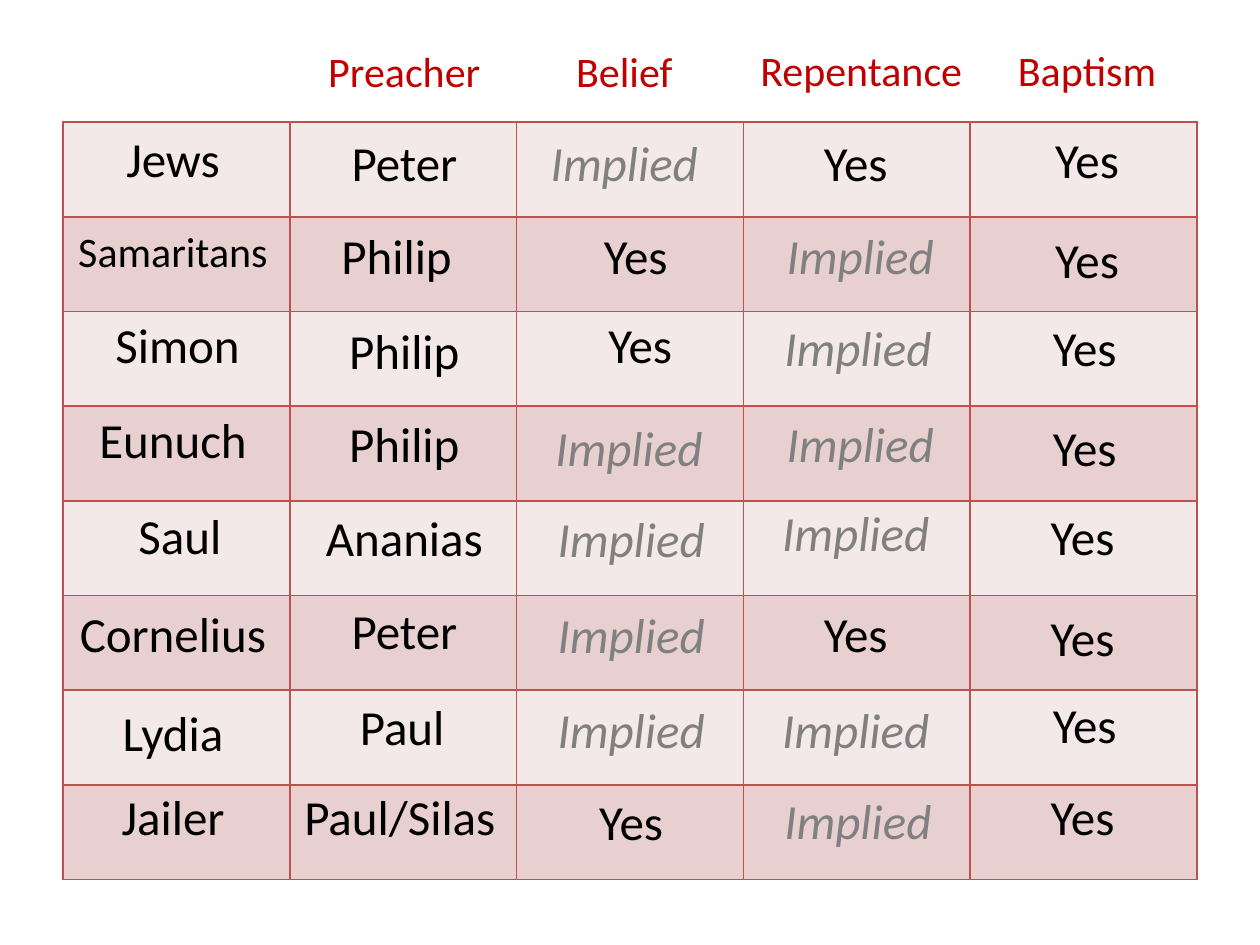
from typing import NamedTuple

from lxml import etree
from pptx import Presentation
from pptx.dml.color import RGBColor
from pptx.enum.text import MSO_AUTO_SIZE, PP_ALIGN
from pptx.oxml.ns import qn
from pptx.util import Inches, Pt

CENTER = PP_ALIGN.CENTER
FIT_SHAPE = MSO_AUTO_SIZE.SHAPE_TO_FIT_TEXT

SLIDE_W, SLIDE_H = 10, 7.5
GRID_LEFT, GRID_TOP = 0.5, 0.97
GRID_W, GRID_H = 9, 6.01
COLUMNS, ROWS = 5, 8
COLUMN, ROW = GRID_W / COLUMNS, GRID_H / ROWS
BORDER = "C0504D"
BANDS = ("F4E9E9", "E8D0D0")
HEADER_ROW = -1


class Style(NamedTuple):
    size: int
    color: str
    italic: bool
    height: float


class Entry(NamedTuple):
    text: str
    shift_columns: float
    shift_rows: float
    width_columns: float = 0.97


HEADING = Style(24, "C00000", False, 0.67)
SMALL = Style(24, "000000", False, 0.67)
STATED = Style(28, "000000", False, 0.76)
IMPLIED = Style(28, "808080", True, 0.76)
SPECIAL_STYLES = {"Implied": IMPLIED, "Samaritans": SMALL}

HEADINGS = (
    Entry("Preacher", 0.02, 0.12),
    Entry("Belief", -0.01, 0.12),
    Entry("Repentance", 0.01, 0.11, 1.02),
    Entry("Baptism", 0.03, 0.11),
)

CONVERSIONS = (
    (Entry("Jews", 0, 0), Entry("Peter", 0.02, 0.04), Entry("Implied", -0.01, 0.04),
     Entry("Yes", 0.01, 0.04), Entry("Yes", 0.03, 0.01)),
    (Entry("Samaritans", 0, 0.03), Entry("Philip ", 0.01, 0.03), Entry("Yes", 0.04, 0.03),
     Entry("Implied", 0.03, 0.03), Entry("Yes", 0.03, 0.07)),
    (Entry("Simon", 0.02, -0.03), Entry("Philip", 0.02, 0.03), Entry("Yes", 0.06, -0.03),
     Entry("Implied", 0.02, 0), Entry("Yes", 0.02, 0)),
    (Entry("Eunuch", 0, -0.03), Entry("Philip", 0.02, 0.01), Entry("Implied", 0.01, 0.05),
     Entry("Implied", 0.03, 0.01), Entry("Yes", 0.02, 0.05)),
    (Entry("Saul", 0.03, -0.02), Entry("Ananias", 0.02, 0.01), Entry("Implied", 0.02, 0.02),
     Entry("Implied", 0.01, -0.05), Entry("Yes", 0.01, -0.01)),
    (Entry("Cornelius", 0, 0.02), Entry("Peter", 0.02, -0.01), Entry("Implied", 0.02, 0.03),
     Entry("Yes", 0.01, 0.02), Entry("Yes", 0.01, 0.06)),
    (Entry("Lydia", 0, 0.07), Entry("Paul", 0.01, 0), Entry("Implied", 0.02, 0.03),
     Entry("Implied", 0.01, 0.03), Entry("Yes", 0.02, -0.02)),
    (Entry("Jailer", 0, -0.05), Entry("Paul/Silas", 0, -0.05), Entry("Yes", 0.02, 0.01),
     Entry("Implied", 0.02, 0), Entry("Yes", 0.01, -0.05)),
)


def rgb(value: str) -> RGBColor:
    """Turn a hex string into a colour."""
    return RGBColor.from_string(value)


def border_cell(cell) -> None:
    """Outline all four sides of a cell."""
    properties = cell._tc.get_or_add_tcPr()
    for side in ("a:lnL", "a:lnR", "a:lnT", "a:lnB"):
        line = etree.SubElement(properties, qn(side), w=str(Pt(1)))
        fill = etree.SubElement(line, qn("a:solidFill"))
        etree.SubElement(fill, qn("a:srgbClr"), val=BORDER)


def draw_grid(slide) -> None:
    """Draw the banded table behind the entries."""
    table = slide.shapes.add_table(
        ROWS, COLUMNS, Inches(GRID_LEFT), Inches(GRID_TOP), Inches(GRID_W), Inches(GRID_H)
    ).table
    for row_index in range(ROWS):
        for column_index in range(COLUMNS):
            cell = table.cell(row_index, column_index)
            border_cell(cell)
            cell.fill.solid()
            cell.fill.fore_color.rgb = rgb(BANDS[row_index % len(BANDS)])


def draw_entry(slide, entry: Entry, column: int, row: int, style: Style) -> None:
    """Write one entry at its place on the grid."""
    box = slide.shapes.add_textbox(
        Inches(GRID_LEFT + (column + entry.shift_columns) * COLUMN),
        Inches(GRID_TOP + (row + entry.shift_rows) * ROW),
        Inches(entry.width_columns * COLUMN),
        Inches(style.height * ROW),
    )
    frame = box.text_frame
    frame.word_wrap = True
    frame.auto_size = FIT_SHAPE
    paragraph = frame.paragraphs[0]
    paragraph.alignment = CENTER
    run = paragraph.add_run()
    run.text = entry.text
    font_format = {"name": "Calibri", "size": Pt(style.size), "italic": style.italic}
    for attribute, value in font_format.items():
        setattr(run.font, attribute, value)
    run.font.color.rgb = rgb(style.color)


def main() -> None:
    """Build the slide and save it."""
    deck = Presentation()
    deck.slide_width, deck.slide_height = Inches(SLIDE_W), Inches(SLIDE_H)
    slide = deck.slides.add_slide(deck.slide_layouts[6])
    draw_grid(slide)
    for column, heading in enumerate(HEADINGS, start=1):
        draw_entry(slide, heading, column, HEADER_ROW, HEADING)
    for row, conversion in enumerate(CONVERSIONS):
        for column, entry in enumerate(conversion):
            draw_entry(slide, entry, column, row, SPECIAL_STYLES.get(entry.text, STATED))
    deck.save("out.pptx")


if __name__ == "__main__":
    main()
